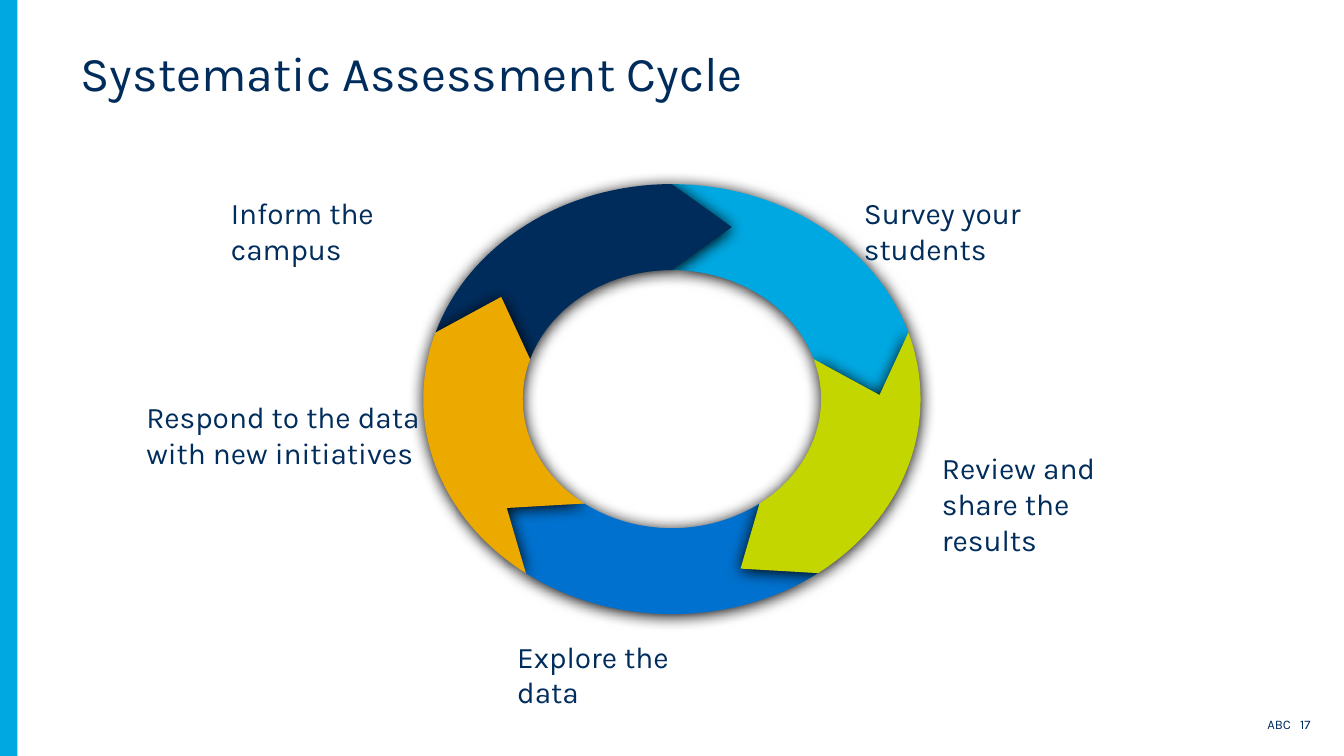
from dataclasses import dataclass
from math import cos, radians, sin

from lxml import etree
from pptx import Presentation
from pptx import util as u
from pptx.dml.color import RGBColor
from pptx.enum import shapes, text
from pptx.oxml.ns import qn


@dataclass(frozen=True)
class Theme:
    font: str = "Karla"
    navy: str = "002C5C"
    label: str = "002D5C"
    sky: str = "00A8E2"
    blue: str = "0071CE"
    gold: str = "ECAA00"
    lime: str = "C3D600"
    shadow: str = "000000"
    title_size: float = 26
    label_size: float = 16
    footer_size: float = 7


T = Theme()
SLIDE_W = 10
SLIDE_H = SLIDE_W * 9 / 16
CENTER_X, CENTER_Y = 5, 2.97
RADIUS_X, RADIUS_Y = 1.85, 1.6
INNER, MIDDLE, TIP = 0.6, 0.8, 0.24
STEP = 72
ARC_PARTS = 32

SEGMENTS = [(0, T.sky), (2, T.blue), (4, T.navy), (3, T.gold), (1, T.lime)]
LABELS = [
    ("Survey your students", (6.33, 1.4, 2.23, 0.37)),
    ("Inform the campus", (1.62, 1.4, 2.13, 0.37)),
    ("Review and share the results", (6.91, 3.3, 1.85, 0.64)),
    ("Explore the data", (3.75, 4.7, 1.76, 0.37)),
    ("Respond to the data with new initiatives", (0.99, 2.92, 2.27, 0.64)),
]


def set_all(obj, values):
    for name, value in values.items():
        setattr(obj, name, value)


def place(sp, box):
    names = ("left", "top", "width", "height")
    set_all(sp, dict(zip(names, map(u.Inches, box))))


def write(sp, words, size, color, frame=None, para=None):
    tf = sp.text_frame
    set_all(tf, {"word_wrap": True, "auto_size": text.MSO_AUTO_SIZE.NONE,
                 "vertical_anchor": text.MSO_ANCHOR.TOP, **(frame or {})})
    p = tf.paragraphs[0]
    set_all(p, {"alignment": text.PP_ALIGN.LEFT, **(para or {})})
    r = p.add_run()
    r.text = words
    set_all(r.font, {"name": T.font, "size": u.Pt(size)})
    r.font.color.rgb = RGBColor.from_string(color)


def add_text(s, words, box, *args, **formats):
    sp = s.shapes.add_textbox(*map(u.Inches, box))
    write(sp, words, *args, **formats)


def paint(sp, color):
    sp.shadow.inherit = False
    sp.fill.solid()
    sp.fill.fore_color.rgb = RGBColor.from_string(color)
    sp.line.fill.background()


def add_shadow(sp):
    effects = sp._element.spPr.find(qn("a:effectLst"))
    shadow = etree.SubElement(effects, qn("a:outerShdw"), {
        "blurRad": str(u.Pt(8.5)), "dist": str(u.Pt(1)),
        "dir": "5400000", "rotWithShape": "0",
    })
    etree.SubElement(shadow, qn("a:srgbClr"), val=T.shadow)


def ring_point(angle, radius, forward=0):
    a = radians(angle)
    x = CENTER_X + RADIUS_X * (radius * cos(a) - forward * sin(a))
    y = CENTER_Y + RADIUS_Y * (radius * sin(a) + forward * cos(a))
    return u.Inches(x), u.Inches(y)


def add_segment(s, index, color):
    start = -90 + index * STEP
    end = start + STEP
    angles = [start + STEP * i / ARC_PARTS for i in range(ARC_PARTS + 1)]
    points = [ring_point(a, 1) for a in angles]
    points.append(ring_point(end, MIDDLE, TIP))
    points += [ring_point(a, INNER) for a in reversed(angles)]
    points.append(ring_point(start, MIDDLE, TIP))
    builder = s.shapes.build_freeform(*points[0])
    builder.add_line_segments(points[1:], close=True)
    sp = builder.convert_to_shape()
    paint(sp, color)
    add_shadow(sp)


def add_bar(s, box, color):
    sp = s.shapes.add_shape(shapes.MSO_SHAPE.RECTANGLE, *map(u.Inches, box))
    paint(sp, color)


def main():
    prs = Presentation()
    set_all(prs, {"slide_width": u.Inches(SLIDE_W), "slide_height": u.Inches(SLIDE_H)})
    s = prs.slides.add_slide(prs.slide_layouts[5])

    add_text(s, "ABC   17", (9.31, 5.28, 0.54, 0.22), T.footer_size, T.navy,
             frame={"word_wrap": False, "vertical_anchor": text.MSO_ANCHOR.MIDDLE},
             para={"alignment": text.PP_ALIGN.RIGHT})
    add_bar(s, (0, 0, 0.13, SLIDE_H), T.sky)

    title = s.shapes.title
    place(title, (0.5, 0.32, 8.66, 0.45))
    write(title, "Systematic Assessment Cycle", T.title_size, T.navy,
          para={"line_spacing": 0.9})

    for index, color in SEGMENTS:
        add_segment(s, index, color)
    for words, box in LABELS:
        add_text(s, words, box, T.label_size, T.label)

    prs.save("out.pptx")


if __name__ == "__main__":
    main()
